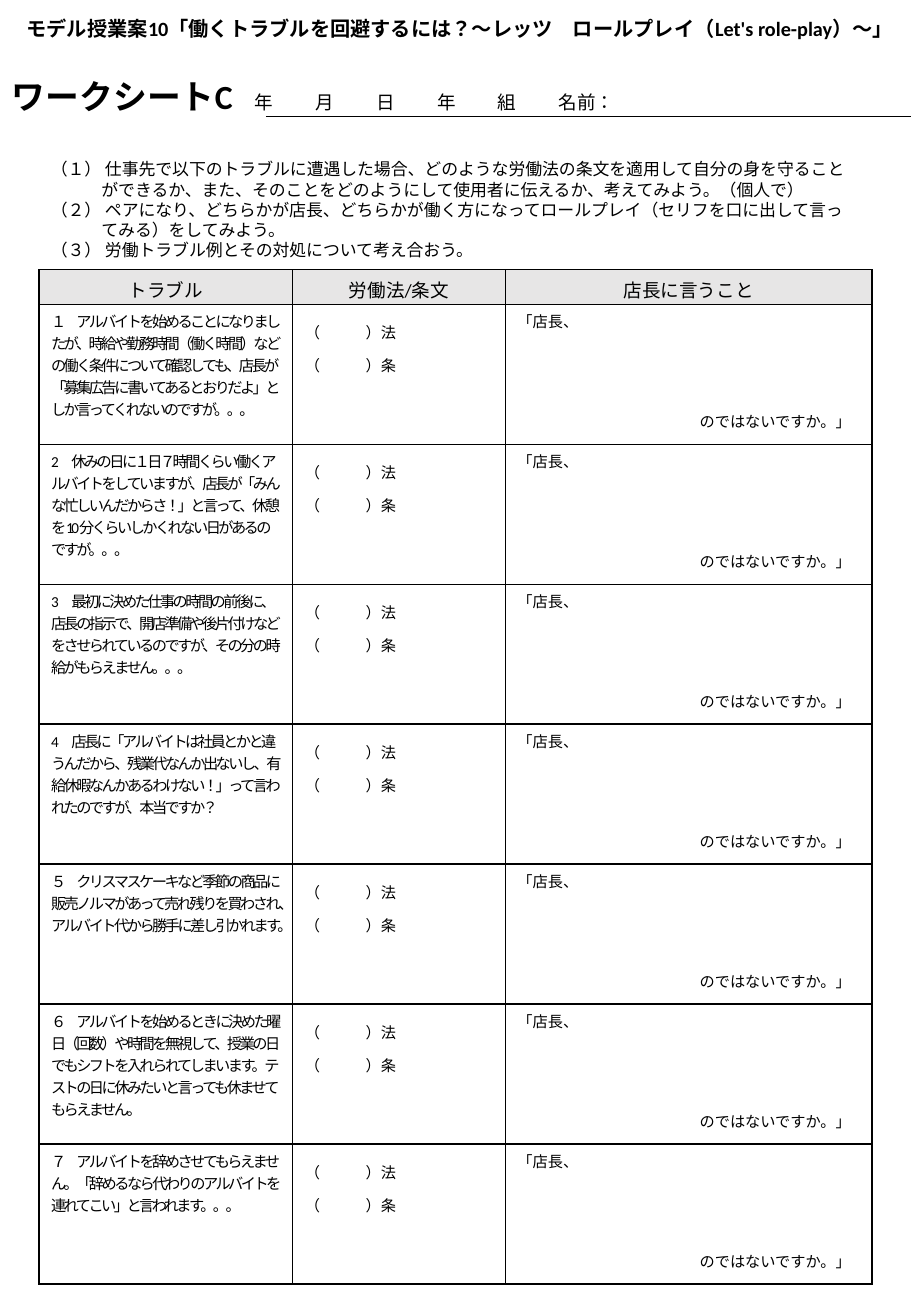
from lxml import etree
from pptx import Presentation
from pptx.dml.color import RGBColor
from pptx.enum.lang import MSO_LANGUAGE_ID
from pptx.enum.shapes import MSO_CONNECTOR
from pptx.enum.text import PP_ALIGN
from pptx.oxml.ns import qn
from pptx.util import Inches, Pt

STRAIGHT = MSO_CONNECTOR.STRAIGHT
CENTER = PP_ALIGN.CENTER
LEFT = PP_ALIGN.LEFT
JAPANESE = MSO_LANGUAGE_ID.JAPANESE

COLORS = {"ink": "000000", "paper": "FFFFFF", "header": "E7E6E6"}
FONT = "Calibri"
COLUMNS, ROWS = 75, 108.3
CELL = 0.1

HEADING = "モデル授業案10「働くトラブルを回避するには？～レッツ　ロールプレイ（Let's role-play）～」"
SHEET_NAME = "ワークシートC"
NAME_FIELDS = ["年", "月", "日", "年", "組", "名前："]
FIELD_OFFSETS = [0, 3, 6, 10, 13, 15]
FIELD_START, FIELD_SIZE = 29.6, 11
INSTRUCTIONS = [
    "（１） 仕事先で以下のトラブルに遭遇した場合、どのような労働法の条文を適用して自分の身を守ること\v"
    "ができるか、また、そのことをどのようにして使用者に伝えるか、考えてみよう。（個人で）",
    "（２） ペアになり、どちらかが店長、どちらかが働く方になってロールプレイ（セリフを口に出して言っ\v"
    "てみる）をしてみよう。",
    "（３） 労働トラブル例とその対処について考え合おう。",
]
TABLE_HEADERS = ["トラブル", "労働法/条文", "店長に言うこと"]
TROUBLES = [
    "１　アルバイトを始めることになりましたが、時給や勤務時間（働く時間）などの働く条件について確認しても、"
    "店長が「募集広告に書いてあるとおりだよ」としか言ってくれないのですが。。。",
    "2　休みの日に１日７時間くらい働くアルバイトをしていますが、店長が「みんな忙しいんだからさ！」と言って、"
    "休憩を10分くらいしかくれない日があるのですが。。。",
    "3　最初に決めた仕事の時間の前後に、店長の指示で、開店準備や後片付けなどをさせられているのですが、"
    "その分の時給がもらえません。。。",
    "4　店長に「アルバイトは社員とかと違うんだから、残業代なんか出ないし、有給休暇なんかあるわけない！」"
    "って言われたのですが、本当ですか？",
    "５　クリスマスケーキなど季節の商品に販売ノルマがあって売れ残りを買わされ、"
    "アルバイト代から勝手に差し引かれます。",
    "６　アルバイトを始めるときに決めた曜日（回数）や時間を無視して、授業の日でもシフトを入れられてしまいます。"
    "テストの日に休みたいと言っても休ませてもらえません。",
    "７　アルバイトを辞めさせてもらえません。「辞めるなら代わりのアルバイトを連れてこい」と言われます。。。",
]
LAW_BLANKS = ["（\t）法", "（\t）条"]
REPLY_START, REPLY_END = "「店長、", "のではないですか。」"


def grid(cells):
    return Inches(cells * CELL)


class Worksheet:
    def __init__(self, slide):
        self.slide = slide

    def format_run(self, run, size, bold=False, tracking=0):
        font = run.font
        font.name = FONT
        font.size = Pt(size)
        font.bold = bold
        font.language_id = JAPANESE
        font.color.rgb = RGBColor.from_string(COLORS["ink"])
        if tracking:
            run._r.get_or_add_rPr().set("spc", str(int(tracking * 100)))

    def set_paragraph(self, paragraph, text, size, leading, align=LEFT, bold=False,
                      tracking=0, before=0, margin=0, indent=0, tabs=()):
        paragraph.text = text
        paragraph.alignment = align
        paragraph.line_spacing = Pt(leading)
        paragraph.space_before = Pt(before)
        properties = paragraph._p.get_or_add_pPr()
        properties.set("marL", str(grid(margin)))
        properties.set("indent", str(grid(indent)))
        if tabs:
            tab_list = etree.SubElement(properties, qn("a:tabLst"))
            for tab in tabs:
                etree.SubElement(tab_list, qn("a:tab"), pos=str(grid(tab)), algn="l")
        for run in paragraph.runs:
            self.format_run(run, size, bold, tracking)

    def set_frame(self, frame, texts, size, leading, **style):
        for index, text in enumerate(texts):
            paragraph = frame.add_paragraph() if index else frame.paragraphs[0]
            self.set_paragraph(paragraph, text, size, leading, **style)

    def text(self, left, top, width, height, texts, size, leading, **style):
        box = self.slide.shapes.add_textbox(grid(left), grid(top), grid(width), grid(height))
        box.text_frame.word_wrap = True
        self.set_frame(box.text_frame, texts, size, leading, **style)
        return box.text_frame

    def line(self, left, top, right):
        connector = self.slide.shapes.add_connector(
            STRAIGHT, grid(left), grid(top), grid(right), grid(top))
        connector.line.color.rgb = RGBColor.from_string(COLORS["ink"])
        connector.line.width = Pt(1)
        etree.SubElement(connector._element.spPr, qn("a:effectLst"))

    def table(self, left, top, widths, heights):
        frame = self.slide.shapes.add_table(
            len(heights), len(widths), grid(left), grid(top),
            grid(sum(widths)), grid(sum(heights)))
        table = frame.table
        table.first_row = False
        table.horz_banding = False
        for column, width in zip(table.columns, widths):
            column.width = grid(width)
        for row, height in zip(table.rows, heights):
            row.height = grid(height)
        return table

    def style_cell(self, cell, color):
        cell.margin_bottom = 0
        properties = cell._tc.get_or_add_tcPr()
        for side in ("a:lnL", "a:lnR", "a:lnT", "a:lnB"):
            border = etree.SubElement(properties, qn(side), w=str(Pt(1)))
            fill = etree.SubElement(border, qn("a:solidFill"))
            etree.SubElement(fill, qn("a:srgbClr"), val=COLORS["ink"])
        cell.fill.solid()
        cell.fill.fore_color.rgb = RGBColor.from_string(COLORS[color])


def add_title(sheet):
    em = FIELD_SIZE / 72 / CELL
    tabs = [FIELD_START + offset * em for offset in FIELD_OFFSETS]
    frame = sheet.text(0, 5.45, COLUMNS, 4.6, [SHEET_NAME], 20, 26, bold=True, tabs=tabs)
    run = frame.paragraphs[0].add_run()
    run.text = "".join("\t" + field for field in NAME_FIELDS)
    sheet.format_run(run, FIELD_SIZE)
    sheet.line(21.9, 9.6, COLUMNS)


def add_trouble_table(sheet):
    table = sheet.table(3.2, 22.2, [20.9, 17.5, 30.2], [2.84] + [11.52] * len(TROUBLES))
    for column, header in enumerate(TABLE_HEADERS):
        cell = table.cell(0, column)
        sheet.style_cell(cell, "header")
        sheet.set_frame(cell.text_frame, [header], 11, 16, align=CENTER)
    for row, trouble in enumerate(TROUBLES, start=1):
        cells = [table.cell(row, column) for column in range(len(TABLE_HEADERS))]
        for cell in cells:
            sheet.style_cell(cell, "paper")
        problem, law, reply = [cell.text_frame for cell in cells]
        sheet.set_frame(problem, [trouble], 9, 13, tracking=-1.5)
        sheet.set_frame(law, LAW_BLANKS, 9, 19.5, tabs=[11.25])
        sheet.set_frame(reply, [REPLY_START], 9, 13)
        sheet.set_paragraph(reply.add_paragraph(), REPLY_END, 9, 13, before=46, margin=15)


def main():
    presentation = Presentation()
    presentation.slide_width = grid(COLUMNS)
    presentation.slide_height = grid(ROWS)
    sheet = Worksheet(presentation.slides.add_slide(presentation.slide_layouts[6]))
    add_title(sheet)
    sheet.text(3.2, 12.6, 68.6, 9.4, INSTRUCTIONS, 10, 12, margin=4.17, indent=-4.17)
    add_trouble_table(sheet)
    sheet.text(1.2, 0.9, 73.8, 4.9, [HEADING], 12, 14.3, bold=True)
    presentation.save("out.pptx")


if __name__ == "__main__":
    main()
